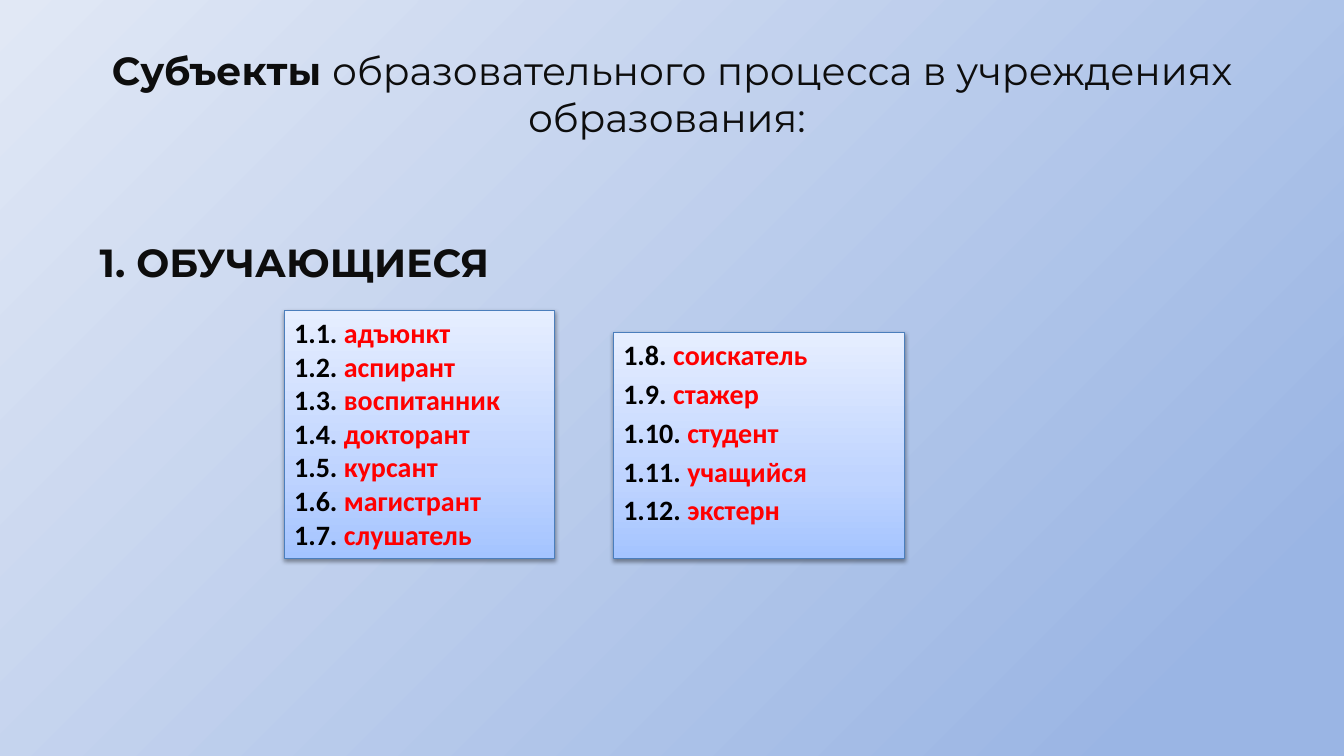
import pptx
import pptx.util
import pptx.dml.color
import pptx.enum.shapes
import pptx.enum.text
import pptx.oxml.ns
from dataclasses import dataclass
from lxml import etree

Pt = pptx.util.Pt
qn = pptx.oxml.ns.qn
ALIGN = pptx.enum.text.PP_ALIGN
ANCHOR = pptx.enum.text.MSO_ANCHOR

TITLE = [("Субъекты ", True), ("образовательного процесса в учреждениях образования: ", False)]
HEADING = "1. ОБУЧАЮЩИЕСЯ"
LEARNERS = [
    "адъюнкт", "аспирант", "воспитанник", "докторант", "курсант", "магистрант",
    "слушатель", "соискатель", "стажер", "студент", "учащийся", "экстерн",
]
FIRST_COLUMN = 7

TITLE_BOX = (48, 21.6, 864, 90)
HEADING_BOX = (64, 126, 568, 356.4)
LEFT_BOX = (203, 221.8, 193, 177.2)
RIGHT_BOX = (438, 237.6, 208, 161.4)


@dataclass(frozen=True)
class Theme:
    heading_font: str = "Montserrat"
    list_font: str = "Calibri"
    heading_size: int = 28
    list_size: int = 20
    heading: str = "0D0D0D"
    number: str = "000000"
    learner: str = "FF0000"
    border: str = "4B7EBC"
    background: tuple = ((10, "9AB5E4"), (100, "E1E8F5"))
    card: tuple = ((0, "A4C4FF"), (35, "BFD4FF"), (100, "E6EEFF"))


theme = Theme()


def rgb(value):
    return pptx.dml.color.RGBColor.from_string(value)


def add_xml(parent, tag, **attrs):
    return etree.SubElement(parent, qn(tag), {k: str(v) for k, v in attrs.items()})


def set_gradient(fill, element, stops):
    fill.gradient()
    grad = element.find(".//" + qn("a:gradFill"))
    stop_list = grad.find(qn("a:gsLst"))
    for old in list(stop_list):
        stop_list.remove(old)
    for position, color in stops:
        stop = add_xml(stop_list, "a:gs", pos=position * 1000)
        add_xml(stop, "a:srgbClr", val=color)
    return grad


def paint_background(s):
    grad = set_gradient(s.background.fill, s._element, theme.background)
    grad.remove(grad.find(qn("a:lin")))
    circle = add_xml(grad, "a:path", path="circle")
    add_xml(circle, "a:fillToRect", l=100000, t=100000)


def place(sp, box):
    sp.left, sp.top, sp.width, sp.height = map(Pt, box)
    tf = sp.text_frame
    tf.word_wrap = True
    tf.auto_size = pptx.enum.text.MSO_AUTO_SIZE.NONE
    return tf


def style_paragraph(p, font, size, align, space=0):
    p.font.name, p.font.size = font, Pt(size)
    p.alignment = align
    p.space_before = Pt(space)
    ppr = p._p.get_or_add_pPr()
    ppr.set("marL", "0")
    ppr.set("indent", "0")
    ppr.insert_element_before(etree.Element(qn("a:buNone")), "a:tabLst", "a:defRPr", "a:extLst")


def add_run(p, text, color, bold):
    r = p.add_run()
    r.text = text
    r.font.bold = bold
    r.font.color.rgb = rgb(color)


def fill_card(sp, box, start, names, space):
    tf = place(sp, box)
    tf.vertical_anchor = ANCHOR.TOP
    grad = set_gradient(sp.fill, sp._element, theme.card)
    grad.find(qn("a:lin")).set("ang", str(270 * 60000))
    sp.line.color.rgb = rgb(theme.border)
    sp.line.width = Pt(0.75)
    sp.shadow.inherit = False
    effects = sp._element.spPr.find(qn("a:effectLst"))
    shadow = add_xml(effects, "a:outerShdw", blurRad=Pt(3.1), dist=Pt(1.6),
                     dir=90 * 60000, rotWithShape=0)
    add_xml(add_xml(shadow, "a:srgbClr", val="000000"), "a:alpha", val=38000)
    for i, name in enumerate(names):
        p = tf.add_paragraph() if i else tf.paragraphs[0]
        style_paragraph(p, theme.list_font, theme.list_size, ALIGN.LEFT, space)
        add_run(p, f"1.{start + i}. ", theme.number, True)
        add_run(p, name, theme.learner, True)


def main():
    prs = pptx.Presentation()
    prs.slide_width, prs.slide_height = Pt(960), Pt(540)
    s = prs.slides.add_slide(prs.slide_layouts[3])
    paint_background(s)
    title, heading, right_card = s.placeholders

    tf = place(title, TITLE_BOX)
    tf.vertical_anchor = ANCHOR.MIDDLE
    p = tf.paragraphs[0]
    style_paragraph(p, theme.heading_font, theme.heading_size, ALIGN.CENTER)
    for text, bold in TITLE:
        add_run(p, text, theme.heading, bold)

    tf = place(heading, HEADING_BOX)
    tf.margin_top = Pt(44)
    p = tf.paragraphs[0]
    style_paragraph(p, theme.heading_font, theme.heading_size, ALIGN.LEFT)
    add_run(p, HEADING, theme.heading, True)

    fill_card(right_card, RIGHT_BOX, FIRST_COLUMN + 1, LEARNERS[FIRST_COLUMN:], 3.7)
    left_card = s.shapes.add_shape(
        pptx.enum.shapes.MSO_SHAPE.RECTANGLE, *map(Pt, LEFT_BOX))
    fill_card(left_card, LEFT_BOX, 1, LEARNERS[:FIRST_COLUMN], 0)
    prs.save("out.pptx")


if __name__ == "__main__":
    main()
